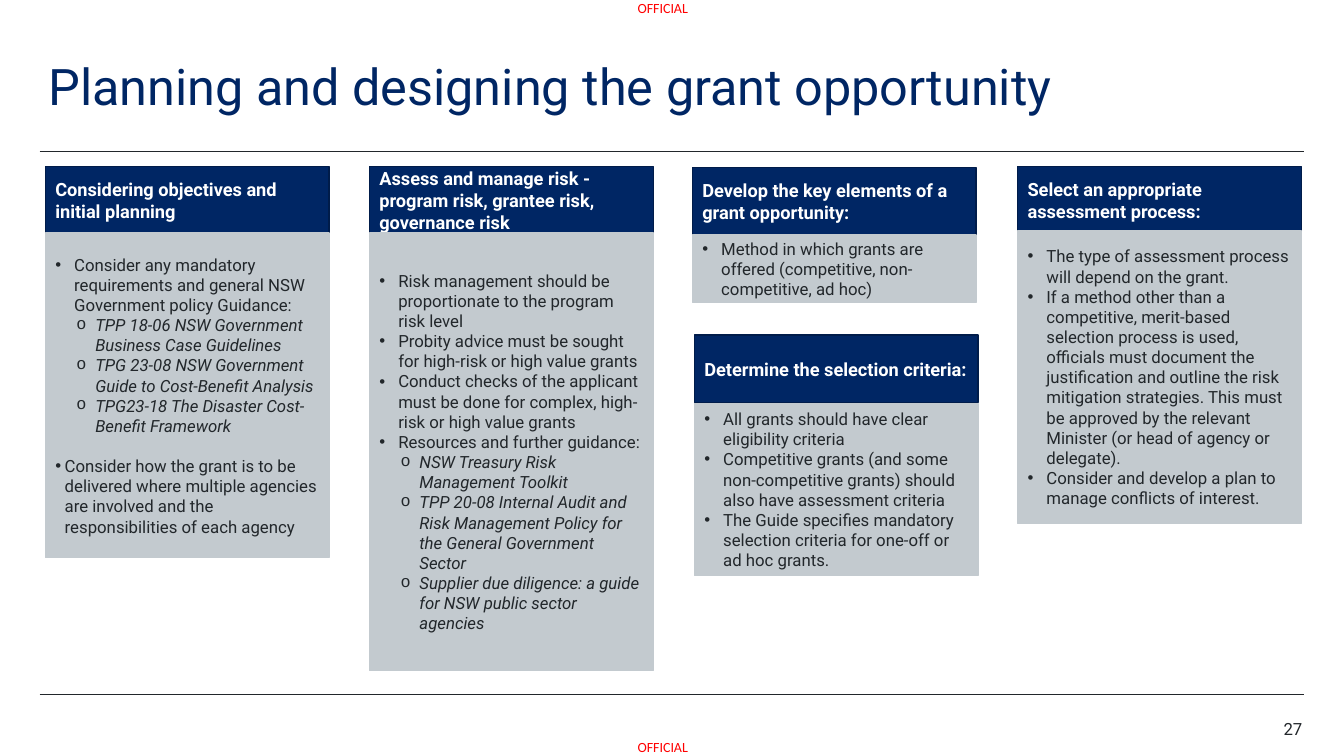
from dataclasses import dataclass

from lxml.etree import SubElement
from pptx import Presentation
from pptx.dml.color import RGBColor
from pptx.enum.shapes import MSO_CONNECTOR, MSO_SHAPE
from pptx.enum.text import MSO_ANCHOR, PP_ALIGN
from pptx.oxml.ns import qn
from pptx.util import Pt


@dataclass(frozen=True)
class Theme:
    navy: str = "002664"
    navy_edge: str = "001C4A"
    grey: str = "C3CACF"
    ink: str = "22272B"
    white: str = "FFFFFF"
    marking: str = "FF0000"
    font: str = "Roboto"
    marking_font: str = "Calibri"
    title_size: float = 36
    heading_size: float = 13
    body_size: float = 12
    marking_size: float = 10


@dataclass(frozen=True)
class Point:
    """A bulleted paragraph; lengths are in points."""
    text: str
    level: int = 0
    margin: float = 13.5
    hang: float = 13.5
    symbol: str = "•"
    symbol_font: str = "Arial"
    gap_before: float = 0


def source(text):
    """A second-level point that names a guidance document."""
    return Point(text, level=1, margin=28.6, symbol="o", symbol_font="Courier New")


class SlideBuilder:
    def __init__(self, slide, theme):
        self.slide = slide
        self.theme = theme

    def style(self, paragraph, size, color, font=None, bold=False, italic=False):
        paragraph.font.name = font or self.theme.font
        paragraph.font.size = Pt(size)
        paragraph.font.color.rgb = RGBColor.from_string(color)
        paragraph.font.bold = bold
        paragraph.font.italic = italic

    def label(self, text, left, top, width, height, size, color,
              font=None, align=PP_ALIGN.LEFT, wrap=True, spacing=1.0):
        box = self.slide.shapes.add_textbox(Pt(left), Pt(top), Pt(width), Pt(height))
        frame = box.text_frame
        frame.word_wrap = wrap
        frame.margin_left = frame.margin_right = 0
        frame.margin_top = frame.margin_bottom = 0
        paragraph = frame.paragraphs[0]
        paragraph.text = text
        paragraph.alignment = align
        paragraph.line_spacing = spacing
        self.style(paragraph, size, color, font)

    def rule(self, left, right, y):
        line = self.slide.shapes.add_connector(
            MSO_CONNECTOR.STRAIGHT, Pt(left), Pt(y), Pt(right), Pt(y))
        line.line.color.rgb = RGBColor.from_string(self.theme.ink)
        line.line.width = Pt(0.5)
        SubElement(line._element.spPr, qn("a:effectLst"))

    def panel(self, left, top, width, height, fill, edge):
        """Draw a filled rectangle and return its text frame."""
        panel = self.slide.shapes.add_shape(
            MSO_SHAPE.RECTANGLE, Pt(left), Pt(top), Pt(width), Pt(height))
        panel.shadow.inherit = False
        panel.fill.solid()
        panel.fill.fore_color.rgb = RGBColor.from_string(fill)
        panel.line.color.rgb = RGBColor.from_string(edge)
        panel.line.width = Pt(1)
        frame = panel.text_frame
        frame.word_wrap = True
        frame.vertical_anchor = MSO_ANCHOR.MIDDLE
        return frame

    def heading(self, text, left, top, width, height):
        frame = self.panel(left, top, width, height, self.theme.navy, self.theme.navy_edge)
        paragraph = frame.paragraphs[0]
        paragraph.text = text
        paragraph.alignment = PP_ALIGN.LEFT
        self.style(paragraph, self.theme.heading_size, self.theme.white, bold=True)

    def points(self, points, left, top, width, height):
        frame = self.panel(left, top, width, height, self.theme.grey, self.theme.grey)
        for index, point in enumerate(points):
            paragraph = frame.add_paragraph() if index else frame.paragraphs[0]
            paragraph.text = point.text
            paragraph.level = point.level
            paragraph.alignment = PP_ALIGN.LEFT
            if point.gap_before:
                paragraph.space_before = Pt(point.gap_before)
            properties = paragraph._p.get_or_add_pPr()
            properties.set("marL", str(Pt(point.margin)))
            properties.set("indent", str(-Pt(point.hang)))
            SubElement(properties, qn("a:buFont"), typeface=point.symbol_font)
            SubElement(properties, qn("a:buChar"), char=point.symbol)
            self.style(paragraph, self.theme.body_size, self.theme.ink,
                       italic=point.level > 0)


OBJECTIVES = [
    Point("Consider any mandatory requirements and general NSW Government policy Guidance:"),
    source("TPP 18-06 NSW Government Business Case Guidelines"),
    source("TPG 23-08 NSW Government Guide to Cost-Benefit Analysis"),
    source("TPG23-18 The Disaster Cost-Benefit Framework"),
    Point("Consider how the grant is to be delivered where multiple agencies are involved "
          "and the responsibilities of each agency",
          margin=6.75, hang=6.75, gap_before=14.4),
]
RISK = [
    Point("Risk management should be proportionate to the program risk level"),
    Point("Probity advice must be sought for high-risk or high value grants"),
    Point("Conduct checks of the applicant must be done for complex, "
          "high-risk or high value grants"),
    Point("Resources and further guidance:"),
    source("NSW Treasury Risk Management Toolkit"),
    source("TPP 20-08 Internal Audit and Risk Management Policy for the General "
           "Government Sector"),
    source("Supplier due diligence: a guide for NSW public sector agencies"),
]
KEY_ELEMENTS = [
    Point("Method in which grants are offered (competitive, non-competitive, ad hoc)"),
]
CRITERIA = [
    Point("All grants should have clear eligibility criteria"),
    Point("Competitive grants (and some non-competitive grants) should also have "
          "assessment criteria"),
    Point("The Guide specifies mandatory selection criteria for one-off or ad hoc grants."),
]
ASSESSMENT = [
    Point("The type of assessment process will depend on the grant."),
    Point("If a method other than a competitive, merit-based selection process is used, "
          "officials must document the justification and outline the risk mitigation "
          "strategies. This must be approved by the relevant Minister (or head of agency "
          "or delegate)."),
    Point("Consider and develop a plan to manage conflicts of interest."),
]

# Heading, points, left, heading top, points top, points height
CARDS = [
    ("Considering objectives and initial planning", OBJECTIVES,
     32.4, 118.8, 166.5, 231.8),
    ("Assess and manage risk - program risk, grantee risk, governance risk", RISK,
     263.9, 118.8, 166.5, 312.5),
    ("Develop the key elements of a grant opportunity:", KEY_ELEMENTS,
     494.6, 119.8, 167.8, 48.2),
    ("Determine the selection criteria:", CRITERIA,
     496, 239.2, 288, 123.1),
    ("Select an appropriate assessment process:", ASSESSMENT,
     726.9, 118.8, 165, 208.8),
]
CARD_WIDTH = 202.7
HEADING_HEIGHT = 48.4


def main():
    presentation = Presentation()
    presentation.slide_width = Pt(960)
    presentation.slide_height = Pt(540)
    theme = Theme()
    builder = SlideBuilder(
        presentation.slides.add_slide(presentation.slide_layouts[6]), theme)

    for marking_top in (0, 527.8):
        builder.label("OFFICIAL", 454.3, marking_top, 38.2, 12.2, theme.marking_size,
                      theme.marking, theme.marking_font, PP_ALIGN.CENTER, wrap=False)
    for rule_y in (108, 496):
        builder.rule(28.3, 931.7, rule_y)
    builder.label("Planning and designing the grant opportunity", 34.6, 44.6, 765.4, 79.2,
                  theme.title_size, theme.navy, spacing=0.9)
    builder.label("27", 891.4, 513.4, 38.9, 14.4, theme.body_size, theme.ink,
                  align=PP_ALIGN.RIGHT)
    for heading, points, left, heading_top, points_top, points_height in CARDS:
        builder.heading(heading, left, heading_top, CARD_WIDTH, HEADING_HEIGHT)
        builder.points(points, left, points_top, CARD_WIDTH, points_height)

    presentation.save("out.pptx")


if __name__ == "__main__":
    main()
